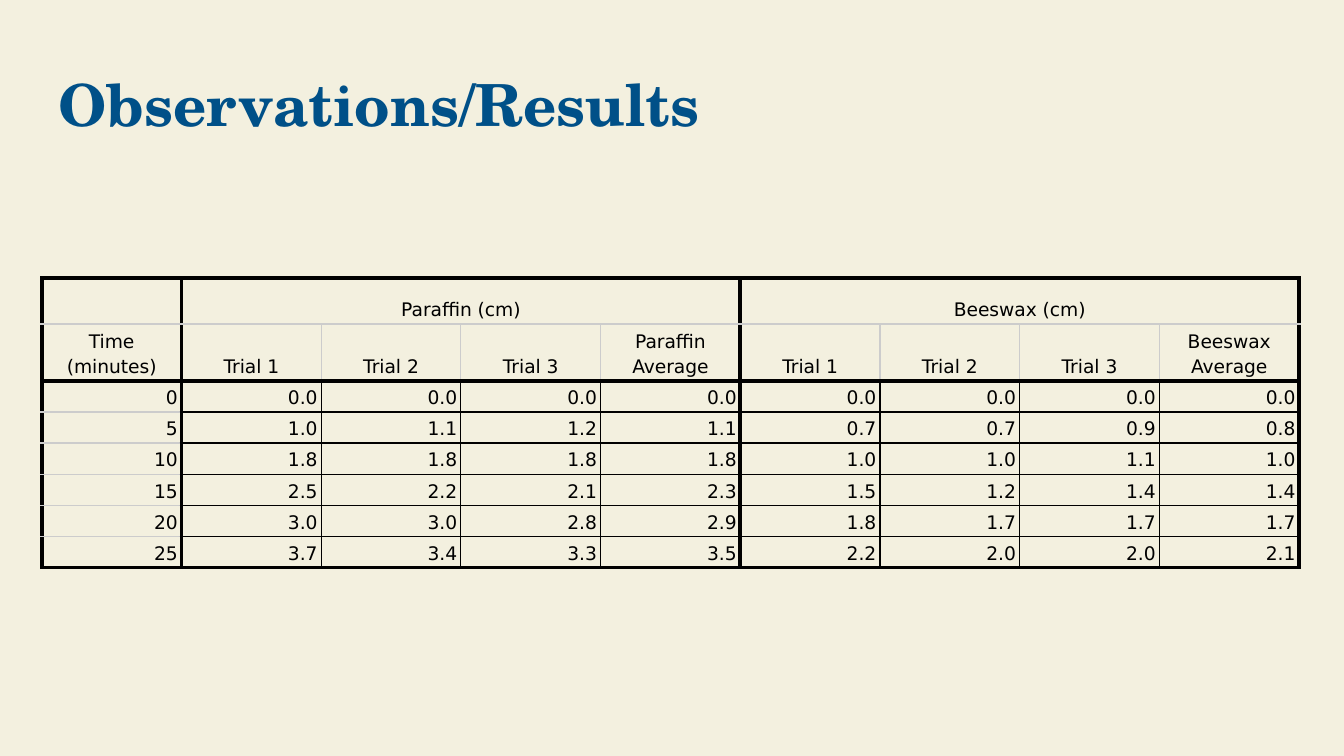
from lxml.etree import SubElement
from pptx import Presentation
from pptx.dml.color import RGBColor
from pptx.enum.text import MSO_ANCHOR as Anchor, PP_ALIGN as Align
from pptx.oxml.ns import qn
from pptx.util import Cm, Pt

BLACK, GREY = "000000", "CCCCCC"
THICK, THIN, PALE = (BLACK, 2.25), (BLACK, 0.75), (GREY, 0.75)
THICK_COLUMN_EDGES = {0, 1, 5, 9}
THICK_ROW_EDGES = {0, 2, 8}
COLUMN_WIDTH = 2.64
ROW_HEIGHTS = [0.81, 1.05] + [0.58] * 6
GROUPS = {1: "Paraffin (cm)", 5: "Beeswax (cm)"}
TRIALS = ["Trial 1", "Trial 2", "Trial 3"]
HEADINGS = ["Time (minutes)", *TRIALS, "Paraffin Average", *TRIALS, "Beeswax Average"]
RESULTS = [
    (0, 0.0, 0.0, 0.0, 0.0, 0.0, 0.0, 0.0, 0.0),
    (5, 1.0, 1.1, 1.2, 1.1, 0.7, 0.7, 0.9, 0.8),
    (10, 1.8, 1.8, 1.8, 1.8, 1.0, 1.0, 1.1, 1.0),
    (15, 2.5, 2.2, 2.1, 2.3, 1.5, 1.2, 1.4, 1.4),
    (20, 3.0, 3.0, 2.8, 2.9, 1.8, 1.7, 1.7, 1.7),
    (25, 3.7, 3.4, 3.3, 3.5, 2.2, 2.0, 2.0, 2.1),
]


def color(value):
    return RGBColor.from_string(value)


def write(frame, text, font="DejaVu Sans", size=10, fill=BLACK, bold=False,
          align=Align.LEFT, spacing=1.15):
    para = frame.paragraphs[0]
    para.alignment = align
    para.line_spacing = spacing
    span = para.add_run()
    span.text = text
    span.font.name = font
    span.font.size = Pt(size)
    span.font.bold = bold
    span.font.color.rgb = color(fill)


def add_title(page, text):
    box = page.shapes.add_textbox(Cm(0.86), Cm(1.24), Cm(23.67), Cm(1.6))
    frame = box.text_frame
    frame.word_wrap = True
    frame.vertical_anchor = Anchor.MIDDLE
    frame.margin_left = frame.margin_right = Cm(0.25)
    frame.margin_top = frame.margin_bottom = Cm(0.25)
    write(frame, text, font="TeX Gyre Schola", size=31.1, fill="005088",
          bold=True, spacing=0.9)


def column_edge(edge, row):
    if edge in THICK_COLUMN_EDGES:
        return THICK
    return PALE if row < 2 else THIN


def row_edge(edge, column):
    if edge in THICK_ROW_EDGES:
        return THICK
    return PALE if edge == 1 or column == 0 else THIN


def draw_border(cell, side, style):
    line_color, width = style
    line = SubElement(cell._tc.get_or_add_tcPr(), qn(f"a:ln{side}"), w=str(Pt(width)))
    fill = SubElement(line, qn("a:solidFill"))
    SubElement(fill, qn("a:srgbClr"), val=line_color)


def format_cell(cell, row, column):
    cell.vertical_anchor = Anchor.BOTTOM
    cell.margin_left = cell.margin_right = Cm(0.07)
    cell.margin_top = cell.margin_bottom = Cm(0.05)
    right = column + (cell.span_width if cell.is_merge_origin else 1)
    draw_border(cell, "L", column_edge(column, row))
    draw_border(cell, "R", column_edge(right, row))
    draw_border(cell, "T", row_edge(row, column))
    draw_border(cell, "B", row_edge(row + 1, column))
    cell.fill.background()


def cell_text(row, column):
    if row == 0:
        return GROUPS.get(column, "")
    if row == 1:
        return HEADINGS[column]
    value = RESULTS[row - 2][column]
    return str(value)


def add_results(page):
    rows, columns = len(ROW_HEIGHTS), len(HEADINGS)
    table = page.shapes.add_table(
        rows, columns, Cm(0.79), Cm(5.26),
        Cm(COLUMN_WIDTH * columns), Cm(sum(ROW_HEIGHTS))).table
    table.first_row = table.horz_banding = False
    for column in table.columns:
        column.width = Cm(COLUMN_WIDTH)
    for row, height in zip(table.rows, ROW_HEIGHTS):
        row.height = Cm(height)
    for start in GROUPS:
        table.cell(0, start).merge(table.cell(0, start + 3))
    for row in range(rows):
        for column in range(columns):
            cell = table.cell(row, column)
            if cell.is_spanned:
                continue
            format_cell(cell, row, column)
            write(cell.text_frame, cell_text(row, column),
                  align=Align.CENTER if row < 2 else Align.RIGHT)


def main():
    deck = Presentation()
    deck.slide_width, deck.slide_height = Cm(25.4), Cm(14.29)
    page = deck.slides.add_slide(deck.slide_layouts[6])
    page.background.fill.solid()
    page.background.fill.fore_color.rgb = color("F3F0DF")
    add_title(page, "Observations/Results")
    add_results(page)
    deck.save("out.pptx")


if __name__ == "__main__":
    main()
